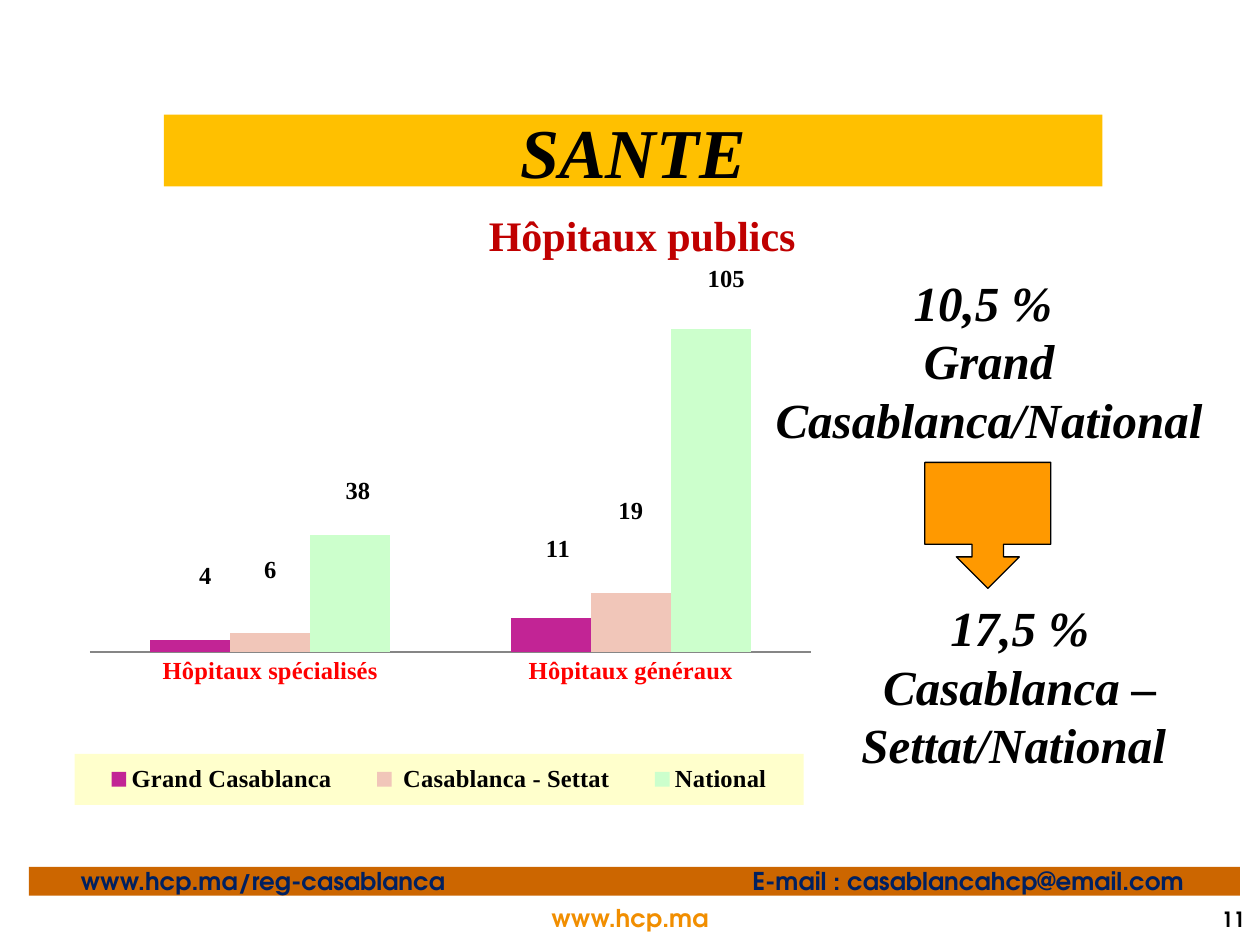
import pptx
import pptx.chart.data
import pptx.dml.color
import pptx.enum.chart
import pptx.enum.shapes
import pptx.enum.text
import pptx.oxml
import pptx.oxml.ns
import pptx.util
from lxml import etree

RGBColor = pptx.dml.color.RGBColor
PP_ALIGN = pptx.enum.text.PP_ALIGN
ANCHOR = pptx.enum.text.MSO_ANCHOR
SHAPES = pptx.enum.shapes.MSO_SHAPE

BLACK = RGBColor(0x00, 0x00, 0x00)
GOLD = RGBColor(0xFF, 0xC0, 0x00)
ORANGE = RGBColor(0xFF, 0x99, 0x00)
LINK_ORANGE = RGBColor(0xF1, 0x8E, 0x00)
RUST = RGBColor(0xCC, 0x66, 0x00)
NAVY = RGBColor(0x00, 0x20, 0x60)
DARK_RED = RGBColor(0xC0, 0x00, 0x00)
RED = RGBColor(0xFF, 0x00, 0x00)
CREAM = RGBColor(0xFF, 0xFF, 0xCC)
AXIS_GREY = RGBColor(0x86, 0x86, 0x86)

SERIF = "Times New Roman"
SANS = "TeX Gyre Adventor"

# The slide is a grid of 100 columns and 75 rows, each a tenth of an inch.
COLUMNS, ROWS = 100, 75
CELL = pptx.util.Inches(0.1)

CATEGORIES = ["Hôpitaux spécialisés", "Hôpitaux généraux"]
# Name, values, colour, label shifts as shares of the chart's size
HOSPITALS = [
    ("Grand Casablanca", (4, 11), RGBColor(0xC2, 0x24, 0x95),
     ((0.02, -0.07), (0.01, -0.08))),
    (" Casablanca - Settat", (6, 19), RGBColor(0xF1, 0xC6, 0xB9),
     ((0, -0.07), (0, -0.1))),
    ("National", (38, 105), RGBColor(0xCC, 0xFF, 0xCC),
     ((0.01, -0.04), (0.02, -0.05))),
]


def grid(*cells):
    return [round(cell * CELL) for cell in cells]


def style_font(font, size, color=BLACK, name=SERIF, bold=True, italic=False):
    font.size = pptx.util.Pt(size)
    font.name = name
    font.bold = bold
    font.italic = italic
    font.color.rgb = color


def write(frame, text, align=PP_ALIGN.CENTER, anchor=ANCHOR.TOP, tab=None,
          line_spacing=None, **font):
    """Fill a text frame, one paragraph for each line of text."""
    frame.word_wrap = True
    frame.vertical_anchor = anchor
    frame.text = text
    for paragraph in frame.paragraphs:
        paragraph.alignment = align
        if line_spacing:
            paragraph.line_spacing = line_spacing
        if tab:
            properties = paragraph._p.get_or_add_pPr()
            stops = etree.SubElement(properties, pptx.oxml.ns.qn("a:tabLst"))
            etree.SubElement(stops, pptx.oxml.ns.qn("a:tab"),
                             pos=str(grid(tab)[0]), algn="r")
        for run in paragraph.runs:
            style_font(run.font, **font)


def add_text(slide, cells, text, **style):
    box = slide.shapes.add_textbox(*grid(*cells))
    write(box.text_frame, text, **style)


def add_block(slide, preset, cells, fill, line=None):
    block = slide.shapes.add_shape(preset, *grid(*cells))
    block.shadow.inherit = False
    block.fill.solid()
    block.fill.fore_color.rgb = fill
    if line is None:
        block.line.fill.background()
    else:
        block.line.color.rgb = line
        block.line.width = pptx.util.Pt(0.75)
    return block


def add_title(slide, cells, text):
    title = slide.shapes.title
    title.left, title.top, title.width, title.height = grid(*cells)
    title.fill.solid()
    title.fill.fore_color.rgb = GOLD
    write(title.text_frame, text, anchor=ANCHOR.MIDDLE, size=40, italic=True)


def place(element, index, x, y, w=None, h=None, mode="edge", inner=False):
    """Give a chart part a manual layout, as its child at the given index."""
    for old in element.findall(pptx.oxml.ns.qn("c:layout")):
        element.remove(old)
    settings = [("layoutTarget", "inner")] if inner else []
    if mode == "edge":
        settings += [("xMode", "edge"), ("yMode", "edge")]
    settings += [("x", x), ("y", y)]
    if w is not None:
        settings += [("w", w), ("h", h)]
    layout = pptx.oxml.parse_xml(
        f"<c:layout {pptx.oxml.ns.nsdecls('c')}><c:manualLayout/></c:layout>")
    for tag, value in settings:
        etree.SubElement(layout[0], pptx.oxml.ns.qn(f"c:{tag}"), val=str(value))
    element.insert(index, layout)


def hide_leader_lines(labels):
    for leader in labels.findall(pptx.oxml.ns.qn("c:showLeaderLines")):
        leader.set("val", "0")
    labels.append(pptx.oxml.parse_xml(
        f"<c:extLst {pptx.oxml.ns.nsdecls('c')}>"
        '<c:ext uri="{CE6537A1-D6FC-4f65-9D91-7224C49458BB}" '
        'xmlns:c15="http://schemas.microsoft.com/office/drawing/2012/chart">'
        '<c15:showLeaderLines val="0"/></c:ext></c:extLst>'))


def style_series(series, color, shifts):
    series.format.fill.solid()
    series.format.fill.fore_color.rgb = color
    series.invert_if_negative = False
    series.data_labels.show_value = True
    for index, (dx, dy) in enumerate(shifts):
        label = series.points[index].data_label
        label.position = pptx.enum.chart.XL_LABEL_POSITION.OUTSIDE_END
        style_font(label.font, 14)
        place(label._dLbl, 1, dx, dy, mode="factor")
    hide_leader_lines(series.data_labels._element)


def style_axes(chart):
    categories, values = chart.category_axis, chart.value_axis
    categories.major_tick_mark = pptx.enum.chart.XL_TICK_MARK.NONE
    categories.format.line.color.rgb = AXIS_GREY
    style_font(categories.tick_labels.font, 14, RED)
    values.minimum_scale, values.maximum_scale = 0, 120
    values.has_major_gridlines = False
    values.visible = False


def add_hospital_chart(slide, cells):
    data = pptx.chart.data.CategoryChartData()
    data.categories = CATEGORIES
    for name, values, _, _ in HOSPITALS:
        data.add_series(name, values)
    chart = slide.shapes.add_chart(
        pptx.enum.chart.XL_CHART_TYPE.COLUMN_CLUSTERED, *grid(*cells), data).chart
    style_font(chart.font, 10, name=SANS, bold=False)

    chart.has_title = True
    write(chart.chart_title.text_frame, "Hôpitaux publics", size=24, color=DARK_RED)
    place(chart.chart_title._element, 1, 0.55, 0)

    plot = chart.plots[0]
    plot.vary_by_categories = False
    plot.gap_width, plot.overlap = 150, 0
    place(chart._chartSpace.chart.plotArea, 0, 0.04, 0.13, 0.94, 0.58, inner=True)
    for series, (_, _, color, shifts) in zip(plot.series, HOSPITALS):
        style_series(series, color, shifts)
    style_axes(chart)

    chart.has_legend = True
    legend = chart.legend
    legend.position = pptx.enum.chart.XL_LEGEND_POSITION.TOP
    legend.include_in_layout = False
    style_font(legend.font, 14)
    place(legend._element, 1, 0.02, 0.87, 0.95, 0.08)
    background = pptx.oxml.parse_xml(
        f"<c:spPr {pptx.oxml.ns.nsdecls('c', 'a')}><a:solidFill>"
        f'<a:srgbClr val="{CREAM}"/></a:solidFill></c:spPr>')
    legend._element.find(pptx.oxml.ns.qn("c:txPr")).addprevious(background)


def add_footer(slide):
    add_text(slide, (38.2, 71.2, 23.6, 3.3), "www.hcp.ma",
             size=14, name=SANS, color=LINK_ORANGE)
    add_text(slide, (84.6, 71.2, 15.2, 3.5), "11", align=PP_ALIGN.RIGHT,
             anchor=ANCHOR.MIDDLE, size=12, name=SANS)
    band = add_block(slide, SHAPES.RECTANGLE, (2.3, 68.8, 96.1, 2.3), RUST)
    frame = band.text_frame
    frame.margin_left, frame.margin_top, frame.margin_bottom = grid(4.1, 0.4, 0)
    write(frame, "www.hcp.ma/reg-casablanca\tE-mail : casablancahcp@email.com",
          align=PP_ALIGN.LEFT, anchor=ANCHOR.MIDDLE, tab=87.6, line_spacing=0.8,
          size=14, name=SANS, color=NAVY)


def main():
    deck = pptx.Presentation()
    deck.slide_width, deck.slide_height = grid(COLUMNS, ROWS)
    slide = deck.slides.add_slide(deck.slide_layouts[5])
    add_title(slide, (13, 9.1, 74.5, 5.7), "SANTE")
    add_footer(slide)
    add_hospital_chart(slide, (4.7, 15.9, 60.9, 50.5))
    add_text(slide, (58.6, 21.1, 39.8, 15.1), "10,5 % \nGrand Casablanca/National",
             size=28, italic=True)
    add_block(slide, SHAPES.DOWN_ARROW_CALLOUT, (73.4, 36.7, 10, 10), ORANGE, BLACK)
    add_text(slide, (62.5, 46.9, 35.9, 15.1), " 17,5 %\n Casablanca – Settat/National",
             size=28, italic=True)
    deck.save("out.pptx")


if __name__ == "__main__":
    main()
